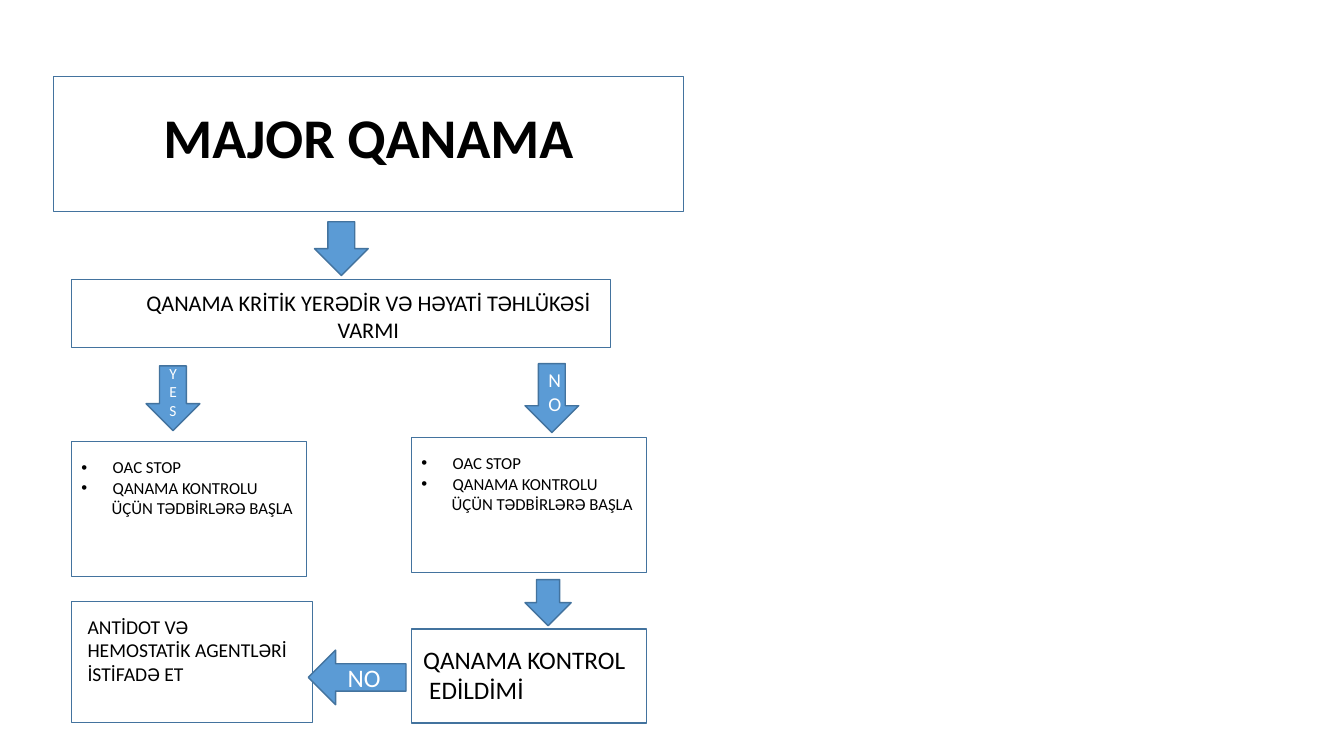
from dataclasses import dataclass

from lxml.etree import SubElement
from pptx import Presentation
from pptx.dml.color import RGBColor
from pptx.enum.shapes import MSO_SHAPE
from pptx.enum.text import MSO_ANCHOR, MSO_AUTO_SIZE, PP_ALIGN
from pptx.oxml.ns import qn
from pptx.util import Inches, Pt

COLORS = {"ink": "000000", "line": "43739E", "fill": "5B9BD5", "light": "FFFFFF"}
FONT = "Calibri"
COLS, ROWS = 160, 90

deck = Presentation()
deck.slide_width, deck.slide_height = Inches(13.33), Inches(7.5)
slide = deck.slides.add_slide(deck.slide_layouts.get_by_name("Two Content"))


@dataclass
class Area:
    """Left, top, width and height in grid columns and rows."""
    col: float
    row: float
    wide: float
    high: float

    def spans(self) -> list[int]:
        col, row = deck.slide_width / COLS, deck.slide_height / ROWS
        return [round(n) for n in (self.col * col, self.row * row,
                                   self.wide * col, self.high * row)]


@dataclass
class Line:
    text: str
    indent: float = 0
    bullet: bool = False


@dataclass
class Label:
    area: Area
    lines: list[Line]
    size: int
    align: PP_ALIGN = PP_ALIGN.LEFT
    wrap: bool = True
    bold: bool = False


@dataclass
class Arrow:
    area: Area
    kind: MSO_SHAPE = MSO_SHAPE.DOWN_ARROW
    text: str = ""
    size: int = 18


def color(name: str) -> RGBColor:
    return RGBColor.from_string(COLORS[name])


def add_line(para, line: Line, size: int, tint: str, align: PP_ALIGN,
             bold: bool = False) -> None:
    para.alignment = align
    para.space_before = Pt(0)
    props = para._p.get_or_add_pPr()
    props.set("marL", str(Inches(line.indent)))
    props.set("indent", str(-Inches(line.indent) if line.bullet else 0))
    if line.bullet:
        SubElement(props, qn("a:buFont")).set("typeface", "Arial")
        SubElement(props, qn("a:buChar")).set("char", "•")
    else:
        SubElement(props, qn("a:buNone"))
    run = para.add_run()
    run.text = line.text
    font = run.font
    font.name, font.size, font.bold = FONT, Pt(size), bold
    font.color.rgb = color(tint)


def write(shape, label: Label) -> None:
    shape.left, shape.top, shape.width, shape.height = label.area.spans()
    frame = shape.text_frame
    frame.word_wrap = label.wrap
    frame.auto_size = MSO_AUTO_SIZE.SHAPE_TO_FIT_TEXT
    frame.vertical_anchor = MSO_ANCHOR.TOP
    for i, line in enumerate(label.lines):
        para = frame.add_paragraph() if i else frame.paragraphs[0]
        add_line(para, line, label.size, "ink", label.align, label.bold)


def add_shape(kind: MSO_SHAPE, area: Area):
    shape = slide.shapes.add_shape(kind, *area.spans())
    shape.shadow.inherit = False
    shape.line.color.rgb = color("line")
    shape.line.width = Pt(1)
    return shape


def add_arrow(arrow: Arrow) -> None:
    shape = add_shape(arrow.kind, arrow.area)
    shape.fill.solid()
    shape.fill.fore_color.rgb = color("fill")
    if arrow.text:
        frame = shape.text_frame
        frame.word_wrap = True
        frame.vertical_anchor = MSO_ANCHOR.MIDDLE
        add_line(frame.paragraphs[0], Line(arrow.text), arrow.size, "light",
                 PP_ALIGN.CENTER)


# Columns of the flow
LEFT, RIGHT = 8.5, 48.96
SIDE = 62.5

# Frames
frames = [
    Area(6.36, 9.12, 75, 16.08),
    Area(LEFT, 33.24, 64.2, 8.16),
    Area(LEFT, 52.56, 28, 16.08),
    Area(RIGHT, 52.08, 28, 16.08),
    Area(RIGHT, 74.9, 28, 11.16),
    Area(LEFT, 71.64, 28.7, 14.4),
]

# Title and lists
title = Label(Area(18, 11.64, 51.72, 9.24), [Line("MAJOR QANAMA")], 40,
              PP_ALIGN.CENTER, wrap=False, bold=True)
steps = [
    Line("OAC STOP", 0.31, True),
    Line("QANAMA KONTROLU", 0.31, True),
    Line("ÜÇÜN TƏDBİRLƏRƏ BAŞLA", 0.3),
]
lists = [Label(Area(col, row, 28.92, 8.52), steps, 12)
         for col, row in ((LEFT, 53.82), (RIGHT, 53.34))]

# Free texts
notes = [
    Label(Area(12.72, 33.84, 62.28, 7.68),
          [Line("QANAMA KRİTİK YERƏDİR VƏ HƏYATİ TƏHLÜKƏSİ VARMI")],
          16, PP_ALIGN.CENTER),
    Label(Area(49.2, 76.1, 26.64, 8.52),
          [Line("QANAMA KONTROL"), Line("EDİLDİMİ", 0.06)], 18, wrap=False),
    Label(Area(9.24, 72.6, 80, 9.72),
          [Line("ANTİDOT VƏ"), Line("HEMOSTATİK AGENTLƏRİ"),
           Line("İSTİFADƏ ET")], 14),
]

# Arrows
arrows = [
    Arrow(Area(37.44, 26.4, 6.4, 6.4)),
    Arrow(Area(17.4, 43.56, 6.4, 7.7), text="YES", size=11),
    Arrow(Area(SIDE, 43.3, 6.4, 8.2), text="NO", size=14),
    Arrow(Area(SIDE, 69, 5.5, 5.5)),
    Arrow(Area(36.7, 77.4, 11.64, 6.5), MSO_SHAPE.LEFT_ARROW, "NO"),
]

# Drawing
for holder, label in zip(slide.placeholders, [title, *lists]):
    write(holder, label)
for area in frames:
    add_shape(MSO_SHAPE.RECTANGLE, area).fill.background()
for note in notes:
    write(slide.shapes.add_textbox(*note.area.spans()), note)
for arrow in arrows:
    add_arrow(arrow)

deck.save("out.pptx")
